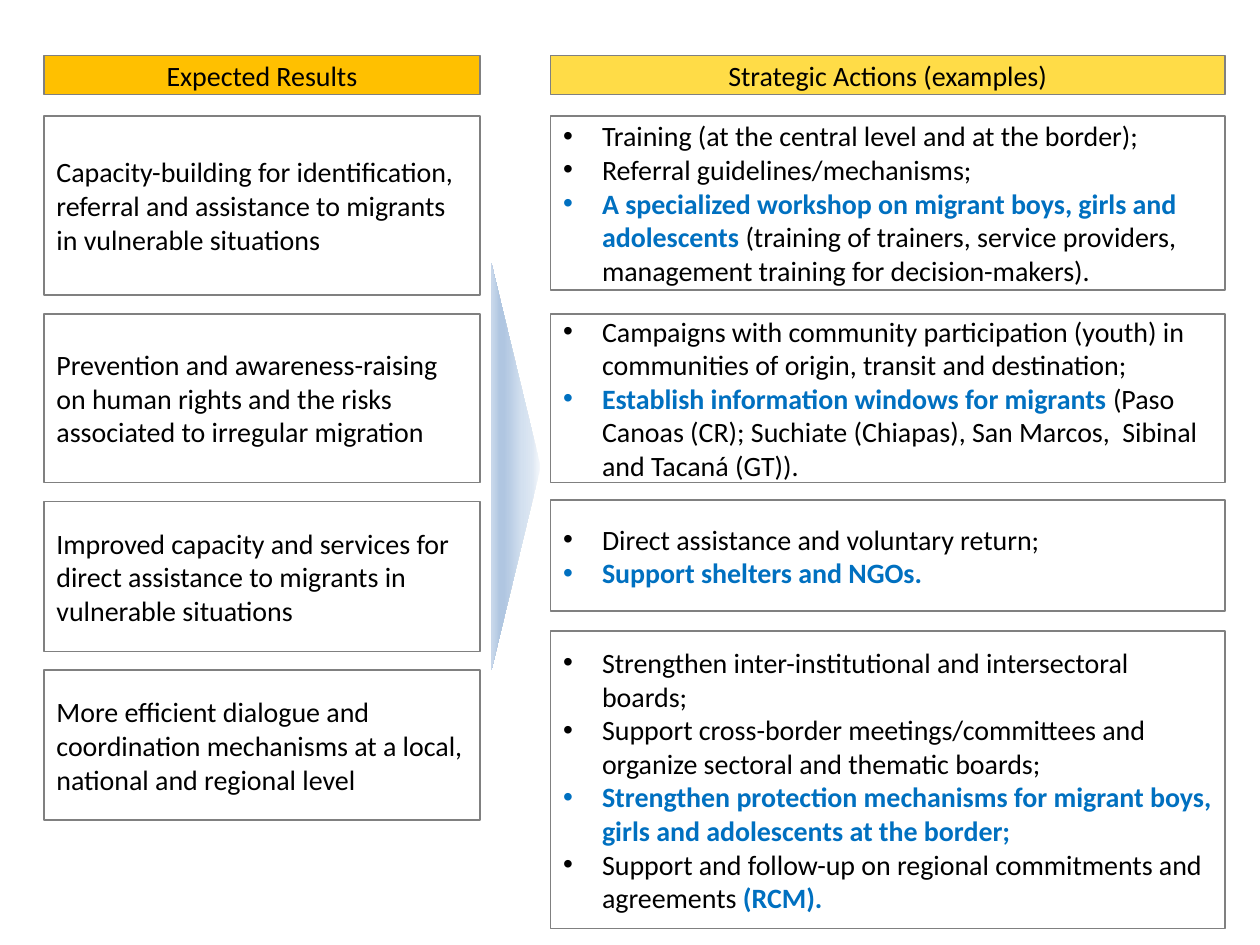
from dataclasses import dataclass

from lxml import etree
from pptx import Presentation
from pptx.dml.color import RGBColor
from pptx.enum.shapes import MSO_SHAPE
from pptx.enum.text import MSO_ANCHOR, PP_ALIGN
from pptx.oxml.ns import qn
from pptx.util import Inches, Pt

RECTANGLE = MSO_SHAPE.RECTANGLE
TRIANGLE = MSO_SHAPE.ISOSCELES_TRIANGLE
MIDDLE = MSO_ANCHOR.MIDDLE
LEFT, CENTER = PP_ALIGN.LEFT, PP_ALIGN.CENTER

BLACK = RGBColor(0x00, 0x00, 0x00)
BLUE = RGBColor(0x00, 0x70, 0xC0)
GREY = RGBColor(0x80, 0x80, 0x80)
AMBER = RGBColor(0xFF, 0xC0, 0x00)
YELLOW = RGBColor(0xFF, 0xDC, 0x47)
ARROW_STOPS = (
    (0, RGBColor(0xF6, 0xF9, 0xFC)),
    (18, RGBColor(0xDC, 0xE6, 0xF2)),
    (37, RGBColor(0xD3, 0xE0, 0xEF)),
    (74, RGBColor(0xB0, 0xC6, 0xE1)),
    (83, RGBColor(0xB0, 0xC6, 0xE1)),
    (100, RGBColor(0xCA, 0xD9, 0xEB)),
)

FONT, FONT_SIZE = "Calibri", Pt(16)
BULLET_INDENT = Inches(0.31)
HEADER_TOP, HEADER_HEIGHT = 0.44, 0.31


@dataclass(frozen=True)
class Run:
    text: str
    highlighted: bool = False


@dataclass(frozen=True)
class Box:
    top: float
    height: float
    paragraphs: tuple[tuple[Run, ...], ...]


@dataclass(frozen=True)
class Column:
    left: float
    width: float
    heading: str
    heading_fill: RGBColor
    bulleted: bool
    boxes: tuple[Box, ...]


def plain(text: str) -> tuple[Run, ...]:
    return (Run(text),)


def key(text: str, rest: str = "") -> tuple[Run, ...]:
    """A highlighted phrase, with an optional plain ending."""
    return (Run(text, True), Run(rest)) if rest else (Run(text, True),)


RESULTS = Column(0.35, 3.46, "Expected Results", AMBER, False, (
    Box(0.92, 1.42, (plain(
        "Capacity-building for identification, referral and assistance "
        "to migrants in vulnerable situations"),)),
    Box(2.49, 1.34, (plain(
        "Prevention and awareness-raising on human rights and the risks "
        "associated to irregular migration"),)),
    Box(3.98, 1.19, (plain(
        "Improved capacity and services for direct assistance to migrants "
        "in vulnerable situations"),)),
    Box(5.32, 1.19, (plain(
        "More efficient dialogue and coordination mechanisms at a local, "
        "national and regional level"),)),
))

ACTIONS = Column(4.37, 5.35, "Strategic Actions (examples)", YELLOW, True, (
    Box(0.92, 1.38, (
        plain("Training (at the central level and at the border);"),
        plain("Referral guidelines/mechanisms;"),
        key("A specialized workshop on migrant boys, girls and adolescents ",
            "(training of trainers, service providers, management training "
            "for decision-makers)."),
    )),
    Box(2.49, 1.34, (
        plain("Campaigns with community participation (youth) in communities "
              "of origin, transit and destination;"),
        key("Establish information windows for migrants ",
            "(Paso Canoas (CR); Suchiate (Chiapas), San Marcos,  Sibinal "
            "and Tacaná (GT))."),
    )),
    Box(3.97, 0.88, (
        plain("Direct assistance and voluntary return;"),
        key("Support shelters and NGOs."),
    )),
    Box(5.01, 2.36, (
        plain("Strengthen inter-institutional and intersectoral boards;"),
        plain("Support cross-border meetings/committees and organize "
              "sectoral and thematic boards;"),
        key("Strengthen protection mechanisms for migrant boys, girls and "
            "adolescents at the border;"),
        (Run("Support and follow-up on regional commitments and agreements "),
         Run("(RCM).", True)),
    )),
))


def add_bullet(paragraph) -> None:
    properties = paragraph._p.get_or_add_pPr()
    properties.set("marL", str(BULLET_INDENT))
    properties.set("indent", str(-BULLET_INDENT))
    etree.SubElement(properties, qn("a:buFont"), typeface="Arial")
    etree.SubElement(properties, qn("a:buChar"), char="•")


def add_box(slide, column: Column, box: Box, fill: RGBColor | None = None,
            align: PP_ALIGN = LEFT, bulleted: bool = False) -> None:
    shape = slide.shapes.add_shape(
        RECTANGLE, Inches(column.left), Inches(box.top),
        Inches(column.width), Inches(box.height))
    shape.shadow.inherit = False
    if fill is None:
        shape.fill.background()
    else:
        shape.fill.solid()
        shape.fill.fore_color.rgb = fill
    shape.line.color.rgb = GREY
    shape.line.width = Pt(1)

    frame = shape.text_frame
    frame.word_wrap = True
    frame.vertical_anchor = MIDDLE
    for index, runs in enumerate(box.paragraphs):
        paragraph = frame.add_paragraph() if index else frame.paragraphs[0]
        paragraph.alignment = align
        if bulleted:
            add_bullet(paragraph)
        for part in runs:
            run = paragraph.add_run()
            run.text = part.text
            run.font.name = FONT
            run.font.size = FONT_SIZE
            run.font.bold = part.highlighted
            run.font.color.rgb = BLUE if part.highlighted else BLACK


def add_column(slide, column: Column) -> None:
    header = Box(HEADER_TOP, HEADER_HEIGHT, (plain(column.heading),))
    add_box(slide, column, header, column.heading_fill, CENTER)
    for box in column.boxes:
        add_box(slide, column, box, bulleted=column.bulleted)


def add_flow_arrow(slide) -> None:
    """Gradient triangle pointing from the results to the actions."""
    arrow = slide.shapes.add_shape(
        TRIANGLE, Inches(2.48), Inches(3.51), Inches(3.23), Inches(0.39))
    arrow.rotation = 90
    arrow.shadow.inherit = False
    arrow.line.fill.background()
    arrow.fill.gradient()
    arrow.fill.gradient_angle = 270
    stops = arrow._element.spPr.find(qn("a:gradFill")).find(qn("a:gsLst"))
    for stop in list(stops):
        stops.remove(stop)
    for percent, color in ARROW_STOPS:
        stop = etree.SubElement(stops, qn("a:gs"), pos=str(percent * 1000))
        etree.SubElement(stop, qn("a:srgbClr"), val=str(color))


def main() -> None:
    presentation = Presentation()
    presentation.slide_width = Inches(10)
    presentation.slide_height = Inches(7.5)
    slide = presentation.slides.add_slide(presentation.slide_layouts[6])
    add_flow_arrow(slide)
    for column in (RESULTS, ACTIONS):
        add_column(slide, column)
    presentation.save("out.pptx")


if __name__ == "__main__":
    main()
